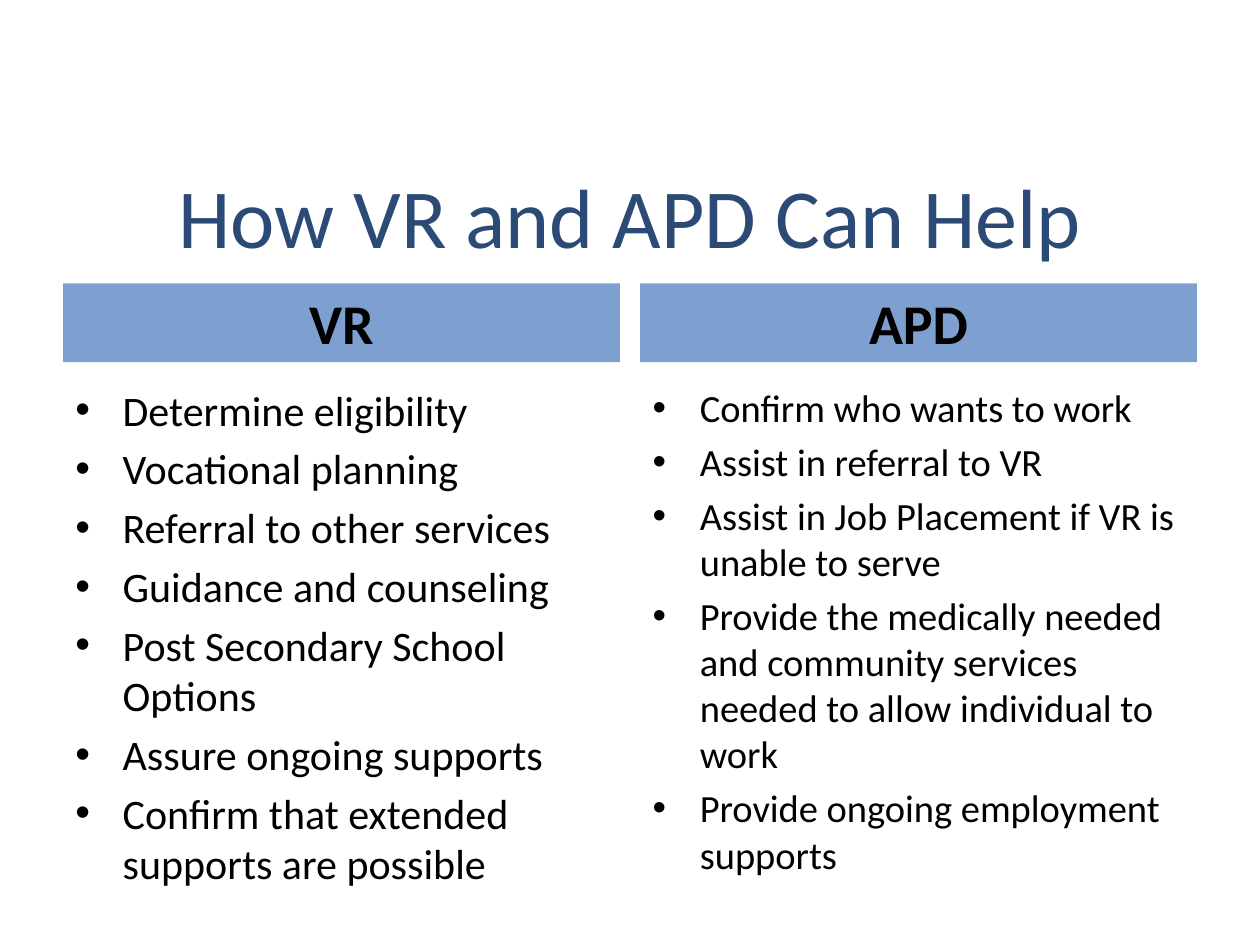
from lxml import etree
from pptx import Presentation
from pptx.dml.color import RGBColor
from pptx.enum.shapes import MSO_SHAPE
from pptx.enum.text import MSO_ANCHOR, PP_ALIGN
from pptx.oxml.ns import qn
from pptx.util import Pt

RECTANGLE = MSO_SHAPE.RECTANGLE
MIDDLE, BOTTOM, TOP = MSO_ANCHOR.MIDDLE, MSO_ANCHOR.BOTTOM, MSO_ANCHOR.TOP
CENTER, LEFT = PP_ALIGN.CENTER, PP_ALIGN.LEFT


def color(value):
    return RGBColor.from_string(value)


def write(box, lines, size, ink="000000", bold=False, align=LEFT, anchor=TOP, bullet=False):
    frame = box.text_frame
    frame.word_wrap = True
    frame.vertical_anchor = anchor
    for index, line in enumerate(lines):
        para = frame.add_paragraph() if index else frame.paragraphs[0]
        para.alignment = align
        para.space_before = Pt(0.2 * size if index else 0)
        if bullet:
            properties = para._p.get_or_add_pPr()
            properties.set("marL", str(Pt(27)))
            properties.set("indent", str(Pt(-27)))
            etree.SubElement(properties, qn("a:buFont"), typeface="Arial")
            etree.SubElement(properties, qn("a:buChar"), char="•")
        span = para.add_run()
        span.text = line
        span.font.name = "Calibri"
        span.font.size = Pt(size)
        span.font.bold = bold
        span.font.color.rgb = color(ink)


deck = Presentation()
deck.slide_width, deck.slide_height = Pt(720), Pt(540)
page = deck.slides.add_slide(deck.slide_layouts[5])
page.background.fill.solid()
page.background.fill.fore_color.rgb = color("FFFFFF")

title = page.shapes.title
title.left, title.top, title.width, title.height = Pt(36), Pt(84), Pt(648), Pt(78)
write(title, ["How VR and APD Can Help"], 48, ink="2B4A76", align=CENTER, anchor=MIDDLE)

columns = [
    ("VR", 24, [
        "Determine eligibility",
        "Vocational planning",
        "Referral to other services",
        "Guidance and counseling",
        "Post Secondary School Options",
        "Assure ongoing supports",
        "Confirm that extended supports are possible",
    ]),
    ("APD", 22, [
        "Confirm who wants to work",
        "Assist in referral to VR",
        "Assist in Job Placement if VR is unable to serve",
        "Provide the medically needed and community services needed to allow individual to work",
        "Provide ongoing employment supports",
    ]),
]
margin, column_width = 36, 318.2
column_step = 720 - 2 * margin - column_width

for index, (heading, size, items) in enumerate(columns):
    left = margin + index * column_step
    header = page.shapes.add_shape(RECTANGLE, Pt(left), Pt(162), Pt(column_width), Pt(45))
    header.shadow.inherit = False
    header.fill.solid()
    header.fill.fore_color.rgb = color("7DA0D0")
    header.line.fill.background()
    write(header, [heading], 32, bold=True, align=CENTER, anchor=BOTTOM)

    body = page.shapes.add_textbox(Pt(left), Pt(216), Pt(column_width), Pt(302.4))
    write(body, items, size, bullet=True)

deck.save("out.pptx")
